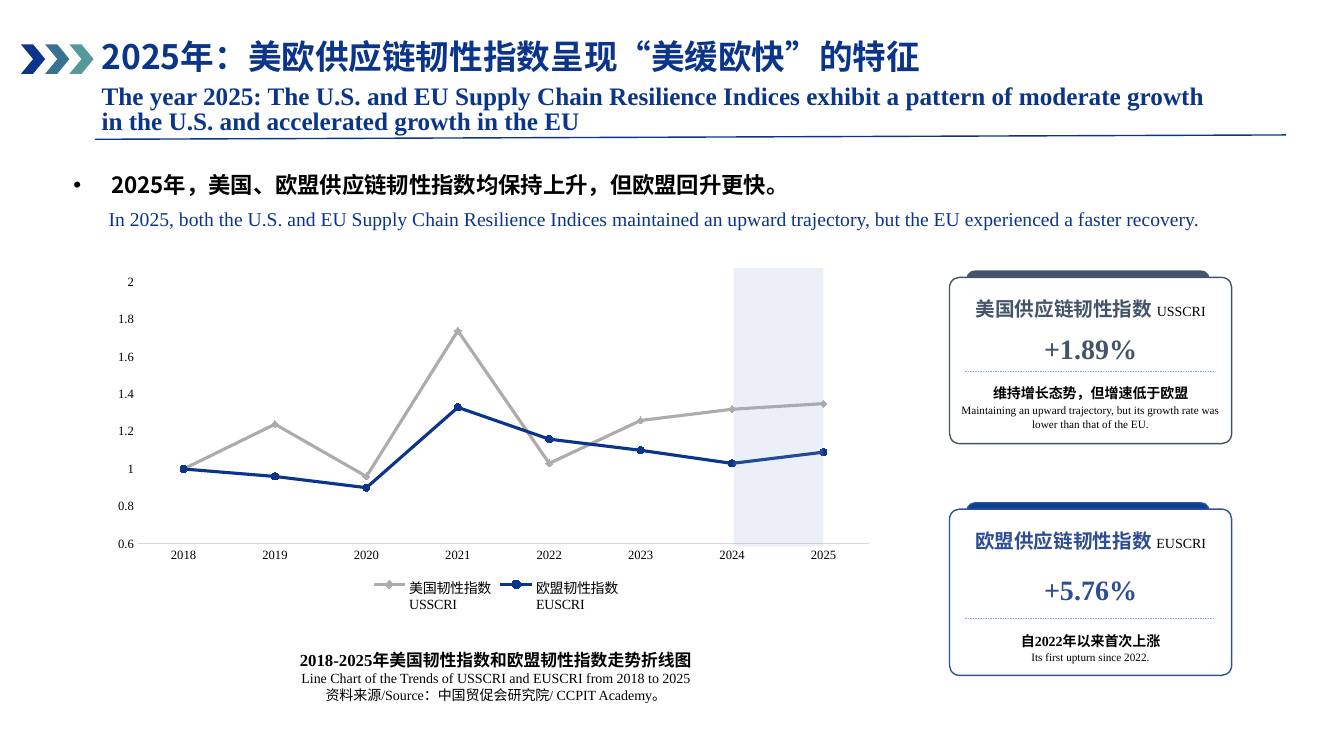
from lxml.etree import SubElement
from pptx import Presentation
from pptx.chart.data import CategoryChartData
from pptx.dml.color import RGBColor
from pptx.enum.chart import XL_CHART_TYPE, XL_LEGEND_POSITION, XL_MARKER_STYLE, XL_TICK_MARK
from pptx.enum.dml import MSO_LINE
from pptx.enum.shapes import MSO_CONNECTOR, MSO_SHAPE
from pptx.enum.text import MSO_ANCHOR, PP_ALIGN
from pptx.oxml import parse_xml
from pptx.oxml.ns import nsdecls, qn
from pptx.util import Cm, Pt

SANS = "Noto Sans CJK SC"
SERIF = "Times New Roman"
NAVY, SLATE, BLUE = "0B358B", "44546A", "2F4D92"
BLACK, WHITE, GREY = "000000", "FFFFFF", "AFABAB"
CENTER = PP_ALIGN.CENTER


def color(code):
    return RGBColor.from_string(code)


def paint(fill, code):
    fill.solid()
    fill.fore_color.rgb = color(code)


def add_box(slide, *place, middle=False):
    frame = slide.shapes.add_textbox(*map(Cm, place)).text_frame
    frame.word_wrap = True
    if middle:
        frame.vertical_anchor = MSO_ANCHOR.MIDDLE
    return frame


def write(frame, text, size=10, code=BLACK, bold=False, face=SERIF,
          align=None, lead=None, gap=None, join=False):
    """Add text as a new paragraph, or to the last one when join is set."""
    para = frame.paragraphs[-1]
    if para.runs and not join:
        para = frame.add_paragraph()
    if not join:
        para.alignment = align
        para.line_spacing = lead
        para.space_before = gap
    run = para.add_run()
    run.text = text
    font = run.font
    font.size, font.bold, font.name = Pt(size), bold, face
    font.color.rgb = color(code)
    SubElement(font._element, qn("a:ea")).set("typeface", SANS)
    return para


def add_shape(slide, kind, place, fill, edge=None, adjust=()):
    shape = slide.shapes.add_shape(kind, *map(Cm, place))
    shape.shadow.inherit = False
    paint(shape.fill, fill)
    if edge:
        shape.line.color.rgb = color(edge)
        shape.line.width = Pt(1)
    else:
        shape.line.fill.background()
    for index, value in enumerate(adjust):
        shape.adjustments[index] = value
    return shape


def add_line(slide, ends, code, width, dash=None):
    line = slide.shapes.add_connector(MSO_CONNECTOR.STRAIGHT, *map(Cm, ends))
    line.line.color.rgb = color(code)
    line.line.width = Pt(width)
    if dash:
        line.line.dash_style = dash
    SubElement(line._element.spPr, qn("a:effectLst"))


def add_bullet(para):
    props = para._p.get_or_add_pPr()
    props.set("marL", str(Cm(0.95)))
    props.set("indent", str(-Cm(0.95)))
    SubElement(props, qn("a:buFont")).set("typeface", "Arial")
    SubElement(props, qn("a:buChar")).set("char", "•")


def add_head(slide):
    for index, code in enumerate((NAVY, "377292", "55999A")):
        add_shape(slide, MSO_SHAPE.CHEVRON, (0.53 + 0.61 * index, 1.12, 0.61, 0.74), code)
    add_line(slide, (2.39, 3.51, 32.41, 3.4), NAVY, 1)
    title = add_box(slide, 2.31, 1.17, 28.91, 2.54)
    write(title, "2025年：美欧供应链韧性指数呈现“美缓欧快”的特征",
          size=24, code=NAVY, bold=True, face=SANS, lead=Pt(18))
    write(title, "The year 2025: The U.S. and EU Supply Chain Resilience Indices exhibit "
          "a pattern of moderate growth in the U.S. and accelerated growth in the EU",
          size=18, code=NAVY, bold=True, lead=Pt(18), gap=Pt(6))


def add_point(slide):
    point = add_box(slide, 1.6, 3.66, 30.73, 1.78, middle=True)
    add_bullet(write(point, "2025年，美国、欧盟供应链韧性指数均保持上升，但欧盟回升更快。",
                     size=16, bold=True, face=SANS, lead=1.3))
    gloss = add_box(slide, 2.49, 5.08, 28.17, 1.45)
    write(gloss, "In 2025, both the U.S. and EU Supply Chain Resilience Indices maintained "
          "an upward trajectory, but the EU experienced a faster recovery.",
          size=14, code=NAVY)


def add_card(slide, top, name, short, rate, note, gloss, drops, tints):
    """Drops are the offsets of rate, divider and note; tints are text, tab and edge."""
    left, width = 23.93, 7.11
    rate_y, rule_y, note_y = (top + drop for drop in drops)
    ink, tab, edge = tints
    add_shape(slide, MSO_SHAPE.ROUND_2_SAME_RECTANGLE,
              (left + 0.44, top - 0.16, 6.1, 0.41), tab, edge, (0.5, 0))
    add_shape(slide, MSO_SHAPE.ROUNDED_RECTANGLE,
              (left, top, width, 4.19), WHITE, edge, (0.06,))
    head = add_box(slide, left, top + 0.1, width, 1.32, middle=True)
    write(head, name + " ", size=14, code=ink, bold=True, face=SANS, align=CENTER, lead=1.1)
    write(head, short, join=True)
    write(add_box(slide, left, rate_y, width, 1.12), rate,
          size=20, code=ink, bold=True, align=CENTER)
    foot = add_box(slide, left, note_y, width, 1.3)
    write(foot, note, bold=True, align=CENTER, lead=1.1)
    write(foot, gloss, size=8, align=CENTER, lead=1.1)
    add_line(slide, (left + 0.4, rule_y, left + 6.7, rule_y), "8FAADC", 0.25, MSO_LINE.DASH)


def set_font(font, size):
    font.size, font.name = Pt(size), SERIF
    font.color.rgb = color(BLACK)


def set_plot(chart, **spots):
    """Fix the inner plot area, in fractions of the chart."""
    marks = "".join(f'<c:{key} val="{value}"/>' for key, value in spots.items())
    layout = parse_xml(
        f'<c:layout {nsdecls("c")}><c:manualLayout><c:layoutTarget val="inner"/>'
        f'<c:xMode val="edge"/><c:yMode val="edge"/>{marks}</c:manualLayout></c:layout>')
    area = chart._chartSpace.chart.plotArea
    for old in area.findall(qn("c:layout")):
        area.remove(old)
    area.insert(0, layout)


def add_trend(slide):
    data = CategoryChartData()
    data.categories = [str(year) for year in range(2018, 2026)]
    data.add_series("美国韧性指数\nUSSCRI", (1, 1.24, 0.96, 1.74, 1.03, 1.26, 1.32, 1.35))
    data.add_series("欧盟韧性指数\nEUSCRI", (1, 0.96, 0.9, 1.33, 1.16, 1.1, 1.03, 1.09))
    place = map(Cm, (2.69, 6.76, 19.61, 8.79))
    chart = slide.shapes.add_chart(XL_CHART_TYPE.LINE_MARKERS, *place, data).chart
    set_font(chart.font, 10)
    chart.has_title = False
    chart.has_legend = True
    chart.legend.position = XL_LEGEND_POSITION.BOTTOM
    chart.legend.include_in_layout = False
    set_font(chart.legend.font, 10)
    set_plot(chart, x=0.04, y=0.04, w=0.94, h=0.75)
    years, scale = chart.category_axis, chart.value_axis
    for axis in (years, scale):
        axis.major_tick_mark = axis.minor_tick_mark = XL_TICK_MARK.NONE
        axis.has_major_gridlines = False
        set_font(axis.tick_labels.font, 9)
    years.format.line.color.rgb = color("D9D9D9")
    years.format.line.width = Pt(0.75)
    scale.format.line.fill.background()
    scale.minimum_scale, scale.maximum_scale, scale.major_unit = 0.6, 2, 0.2
    plot = chart.plots[0]
    plot.vary_by_categories = False
    looks = ((GREY, XL_MARKER_STYLE.DIAMOND), (NAVY, XL_MARKER_STYLE.CIRCLE))
    for line, (code, style) in zip(plot.series, looks):
        line.smooth = False
        line.format.line.color.rgb = color(code)
        line.format.line.width = Pt(2.25)
        line.marker.style, line.marker.size = style, 5
        paint(line.marker.format.fill, code)
        line.marker.format.line.color.rgb = color(code)
    band = add_shape(slide, MSO_SHAPE.RECTANGLE, (18.49, 6.76, 2.26, 7.01), "8FAADC")
    tint = band._element.spPr.find(qn("a:solidFill"))[0]
    SubElement(tint, qn("a:alpha")).set("val", "18000")


def add_caption(slide):
    frame = add_box(slide, 2.69, 16.13, 19.61, 1.83, middle=True)
    write(frame, "2018-2025年美国韧性指数和欧盟韧性指数走势折线图",
          size=12, bold=True, align=CENTER)
    write(frame, "Line Chart of the Trends of USSCRI and EUSCRI from 2018 to 2025", align=CENTER)
    write(frame, "资料来源/Source：中国贸促会研究院/ CCPIT Academy。", align=CENTER)


def main():
    deck = Presentation()
    deck.slide_width, deck.slide_height = Cm(33.87), Cm(19.05)
    slide = deck.slides.add_slide(deck.slide_layouts[6])
    add_head(slide)
    add_point(slide)
    add_card(slide, 6.99, "美国供应链韧性指数", "USSCRI", "+1.89%",
             "维持增长态势，但增速低于欧盟",
             "Maintaining an upward trajectory, but its growth rate was lower than that of the EU.",
             (1.24, 2.36, 2.54), (SLATE, SLATE, SLATE))
    add_card(slide, 12.83, "欧盟供应链韧性指数", "EUSCRI", "+5.76%",
             "自2022年以来首次上涨", "Its first upturn since 2022.",
             (1.47, 2.74, 2.94), (BLUE, "103F98", "2F5597"))
    add_trend(slide)
    add_caption(slide)
    deck.save("out.pptx")


if __name__ == "__main__":
    main()
